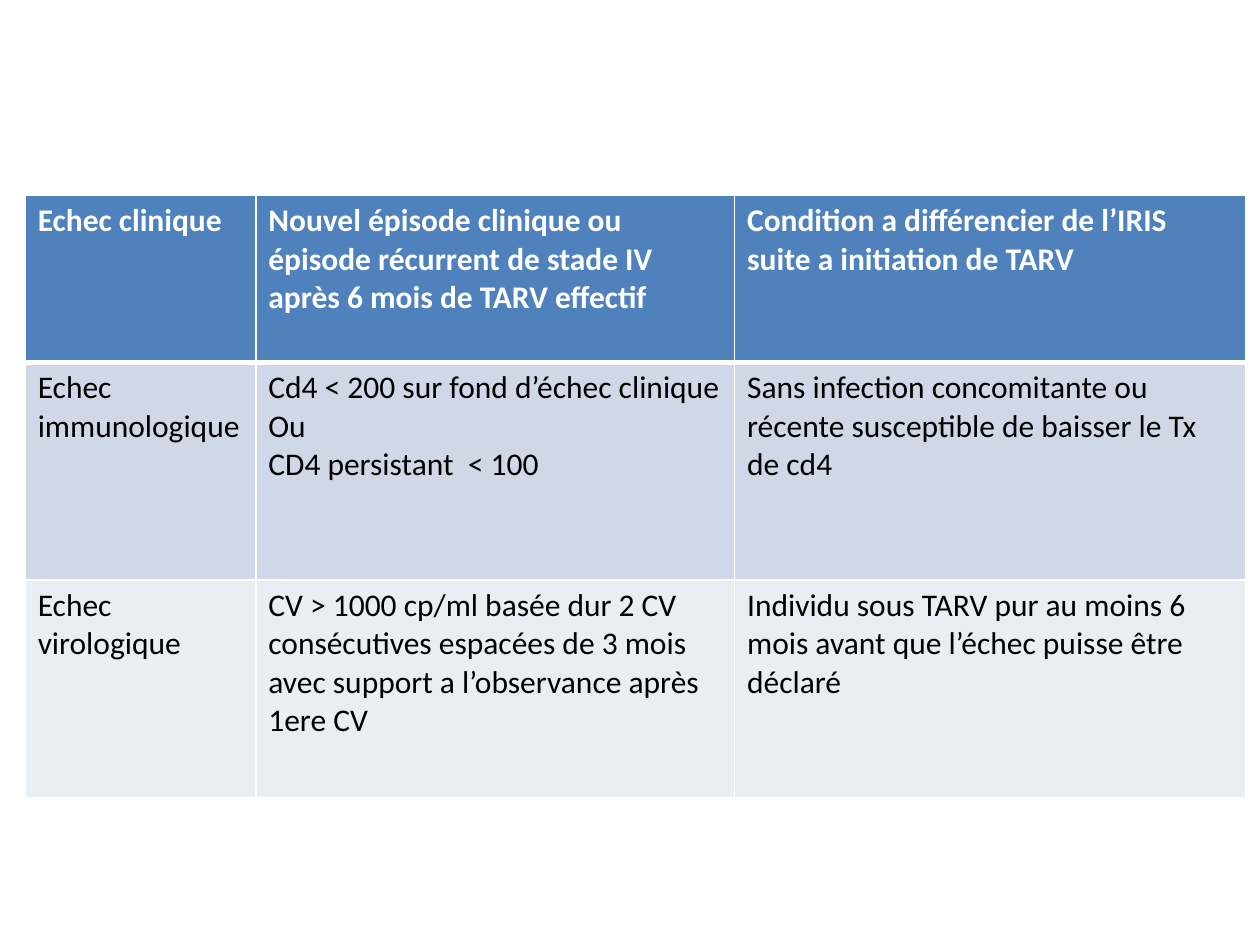
import pptx
import pptx.dml.color
import pptx.oxml
import pptx.oxml.ns
import pptx.util
from pptx.util import Inches

COLORS = {
    "header": "4F81BD",
    "odd_row": "D0D8E8",
    "even_row": "E9EDF4",
    "white": "FFFFFF",
    "black": "000000",
}
COLUMN_WIDTHS = [1.83, 3.8, 4.06]
ROW_HEIGHTS = [1.33, 1.73, 1.73]
ROW_STYLES = [("header", "white"), ("odd_row", "black"), ("even_row", "black")]
FAILURE_CRITERIA = [
    [
        "Echec clinique",
        "Nouvel épisode clinique ou épisode récurrent de stade IV après 6 mois de TARV effectif",
        "Condition a différencier de l’IRIS suite a initiation de TARV",
    ],
    [
        "Echec immunologique",
        "Cd4 < 200 sur fond d’échec clinique\nOu\nCD4 persistant  < 100",
        "Sans infection concomitante ou récente susceptible de baisser le Tx de cd4",
    ],
    [
        "Echec virologique",
        "CV > 1000 cp/ml basée dur 2 CV consécutives espacées de 3 mois "
        "avec support a l’observance après 1ere CV",
        "Individu sous TARV pur au moins 6 mois avant que l’échec puisse être déclaré",
    ],
]


def rgb(name):
    """Return the palette colour with this name."""
    return pptx.dml.color.RGBColor.from_string(COLORS[name])


def set_borders(cell, widths):
    """Draw white borders, given as points by side, around a cell."""
    properties = cell._tc.get_or_add_tcPr()
    for position, (side, points) in enumerate(widths.items()):
        line = pptx.oxml.parse_xml(
            f'<a:ln{side} {pptx.oxml.ns.nsdecls("a")} w="{pptx.util.Pt(points)}">'
            f'<a:solidFill><a:srgbClr val="{COLORS["white"]}"/></a:solidFill>'
            f'<a:prstDash val="solid"/></a:ln{side}>'
        )
        properties.insert(position, line)


def write_cell(cell, text, color, bold):
    """Write each line of the text as a paragraph of the cell."""
    frame = cell.text_frame
    for index, line in enumerate(text.split("\n")):
        paragraph = frame.add_paragraph() if index else frame.paragraphs[0]
        run = paragraph.add_run()
        run.text = line
        run.font.name = "Calibri"
        run.font.size = pptx.util.Pt(18)
        run.font.bold = bold
        run.font.color.rgb = rgb(color)


def add_criteria_table(slide, left, top, width, height):
    """Place the table of treatment failure criteria in the given box."""
    table = slide.shapes.add_table(
        len(ROW_HEIGHTS), len(COLUMN_WIDTHS), left, top, width, height
    ).table
    for column, share in zip(table.columns, COLUMN_WIDTHS):
        column.width = int(width * share / sum(COLUMN_WIDTHS))
    for row, share in zip(table.rows, ROW_HEIGHTS):
        row.height = int(height * share / sum(ROW_HEIGHTS))
    for row_index, (texts, (fill, color)) in enumerate(zip(FAILURE_CRITERIA, ROW_STYLES)):
        is_header = row_index == 0
        borders = {"L": 1, "R": 1, "T": 3 if row_index == 1 else 1, "B": 3 if is_header else 1}
        for cell, text in zip(table.rows[row_index].cells, texts):
            cell.fill.solid()
            cell.fill.fore_color.rgb = rgb(fill)
            set_borders(cell, borders)
            write_cell(cell, text, color, is_header)


def main():
    """Build and save the presentation."""
    presentation = pptx.Presentation()
    presentation.slide_width = Inches(10)
    presentation.slide_height = Inches(7.5)
    slide = presentation.slides.add_slide(presentation.slide_layouts[6])
    add_criteria_table(slide, Inches(0.2), Inches(1.55), Inches(9.69), Inches(4.78))
    presentation.save("out.pptx")


if __name__ == "__main__":
    main()
